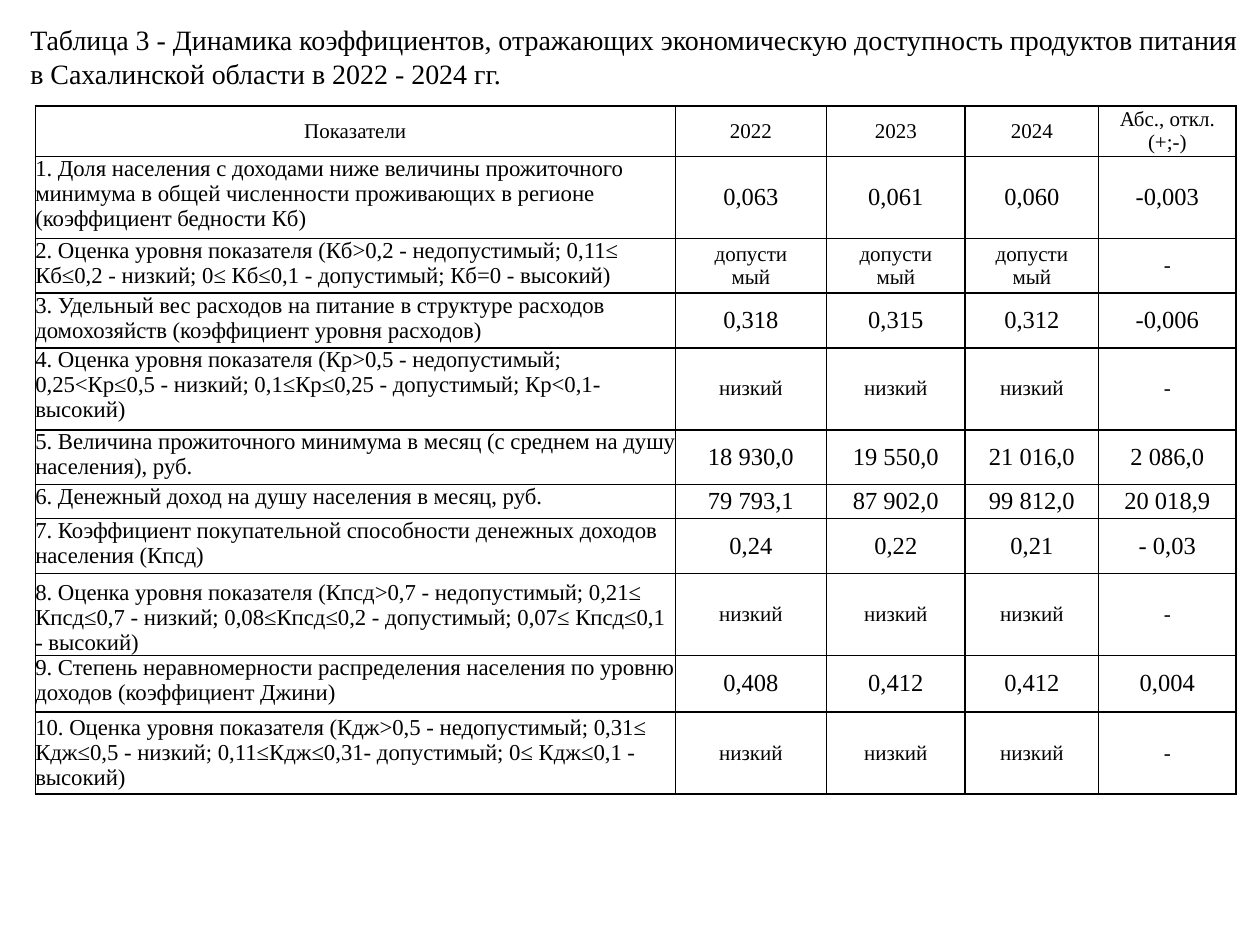
from lxml.etree import SubElement as Sub
from pptx import Presentation
from pptx.dml.color import RGBColor as Rgb
from pptx.enum.text import MSO_ANCHOR as Anchor, MSO_AUTO_SIZE as Auto, PP_ALIGN as Align
from pptx.oxml.ns import qn
from pptx.util import Inches, Pt

COLORS = {"ink": "000000", "paper": "FFFFFF"}
FONT = "Times New Roman"
TITLE = ("Таблица 3 - Динамика коэффициентов, отражающих экономическую доступность "
         "продуктов питания в Сахалинской области в 2022 - 2024 гг.")
HEAD = ["Показатели", "2022", "2023", "2024", "Абс., откл. (+;-)"]
LOW = ["низкий"] * 3 + ["-"]
FIT = ["допусти\nмый"] * 3 + ["-"]
ROWS = [
    ("1. Доля населения с доходами ниже величины прожиточного минимума в общей численности "
     "проживающих в регионе (коэффициент бедности Кб)", ["0,063", "0,061", "0,060", "-0,003"]),
    ("2. Оценка уровня показателя (Кб>0,2 - недопустимый; 0,11≤ Кб≤0,2 - низкий; "
     "0≤ Кб≤0,1 - допустимый; Кб=0 - высокий)", FIT),
    ("3. Удельный вес расходов на питание в структуре расходов домохозяйств "
     "(коэффициент уровня расходов)", ["0,318", "0,315", "0,312", "-0,006"]),
    ("4. Оценка уровня показателя (Кр>0,5 - недопустимый; 0,25<Кр≤0,5 - низкий; "
     "0,1≤Кр≤0,25 - допустимый; Кр<0,1- высокий)", LOW),
    ("5. Величина прожиточного минимума в месяц (с среднем на душу населения), руб.",
     ["18 930,0", "19 550,0", "21 016,0", "2 086,0"]),
    ("6. Денежный доход на душу населения в месяц, руб.",
     ["79 793,1", "87 902,0", "99 812,0", "20 018,9"]),
    ("7. Коэффициент покупательной способности денежных доходов населения (Кпсд)",
     ["0,24", "0,22", "0,21", "- 0,03"]),
    ("8. Оценка уровня показателя (Кпсд>0,7 - недопустимый; 0,21≤ Кпсд≤0,7 - низкий; "
     "0,08≤Кпсд≤0,2 - допустимый; 0,07≤ Кпсд≤0,1 - высокий)", LOW),
    ("9. Степень неравномерности распределения населения по уровню доходов "
     "(коэффициент Джини)", ["0,408", "0,412", "0,412", "0,004"]),
    ("10. Оценка уровня показателя (Кдж>0,5 - недопустимый; 0,31≤ Кдж≤0,5 - низкий; "
     "0,11≤Кдж≤0,31- допустимый; 0≤ Кдж≤0,1 - высокий)", LOW),
]
WIDTHS = [5.08, 1.2, 1.1, 1.06, 1.09]
HEIGHTS = [0.4, 0.6, 0.42, 0.4, 0.4, 0.4, 0.27, 0.4, 0.6, 0.45, 0.45]
ANCHORS = {8: Anchor.BOTTOM, 10: Anchor.MIDDLE}


def write(frame, text, size=12, align=Align.CENTER, space=1.0):
    """Fill a text frame with formatted paragraphs."""
    frame.text = text
    for para in frame.paragraphs:
        para.alignment = align
        para.line_spacing = space
        para.space_before = Pt(0)
        for run in para.runs:
            run.font.size = Pt(size)
            run.font.name = FONT
            run.font.color.rgb = Rgb.from_string(COLORS["ink"])


def style(cell, anchor):
    """Set the margins, borders, fill and anchor of a cell."""
    cell.margin_left = cell.margin_right = cell.margin_top = cell.margin_bottom = 0
    cell.vertical_anchor = anchor
    props = cell._tc.get_or_add_tcPr()
    for side in ("lnL", "lnR", "lnT", "lnB"):
        line = Sub(props, qn(f"a:{side}"), w=str(Pt(1)))
        Sub(Sub(line, qn("a:solidFill")), qn("a:srgbClr"), val=COLORS["ink"])
    cell.fill.solid()
    cell.fill.fore_color.rgb = Rgb.from_string(COLORS["paper"])


def main():
    """Build the slide with its title and table."""
    deck = Presentation()
    deck.slide_width, deck.slide_height = Inches(10), Inches(7.5)
    slide = deck.slides.add_slide(deck.slide_layouts[5])

    title = slide.shapes.title
    title.left, title.top = Inches(0.14), Inches(0.13)
    title.width, title.height = Inches(9.83), Inches(0.64)
    frame = title.text_frame
    frame.word_wrap = True
    frame.auto_size = Auto.SHAPE_TO_FIT_TEXT
    frame.vertical_anchor = Anchor.TOP
    write(frame, TITLE, size=16, align=Align.LEFT)

    table = slide.shapes.add_table(
        len(HEIGHTS), len(WIDTHS), Inches(0.28), Inches(0.84),
        Inches(sum(WIDTHS)), Inches(sum(HEIGHTS))).table
    table.first_row = table.horz_banding = False
    for col, width in zip(table.columns, WIDTHS):
        col.width = Inches(width)
    for row, height in zip(table.rows, HEIGHTS):
        row.height = Inches(height)

    for c, text in enumerate(HEAD):
        write(table.cell(0, c).text_frame, text)
        style(table.cell(0, c), Anchor.MIDDLE)
    for r, (label, values) in enumerate(ROWS, 1):
        write(table.cell(r, 0).text_frame, label, size=13, align=Align.LEFT)
        style(table.cell(r, 0), ANCHORS.get(r, Anchor.TOP))
        size = 12 if values in (LOW, FIT) else 14
        for c, text in enumerate(values, 1):
            write(table.cell(r, c).text_frame, text, size=size)
            style(table.cell(r, c), Anchor.MIDDLE)

    deck.save("out.pptx")


if __name__ == "__main__":
    main()
